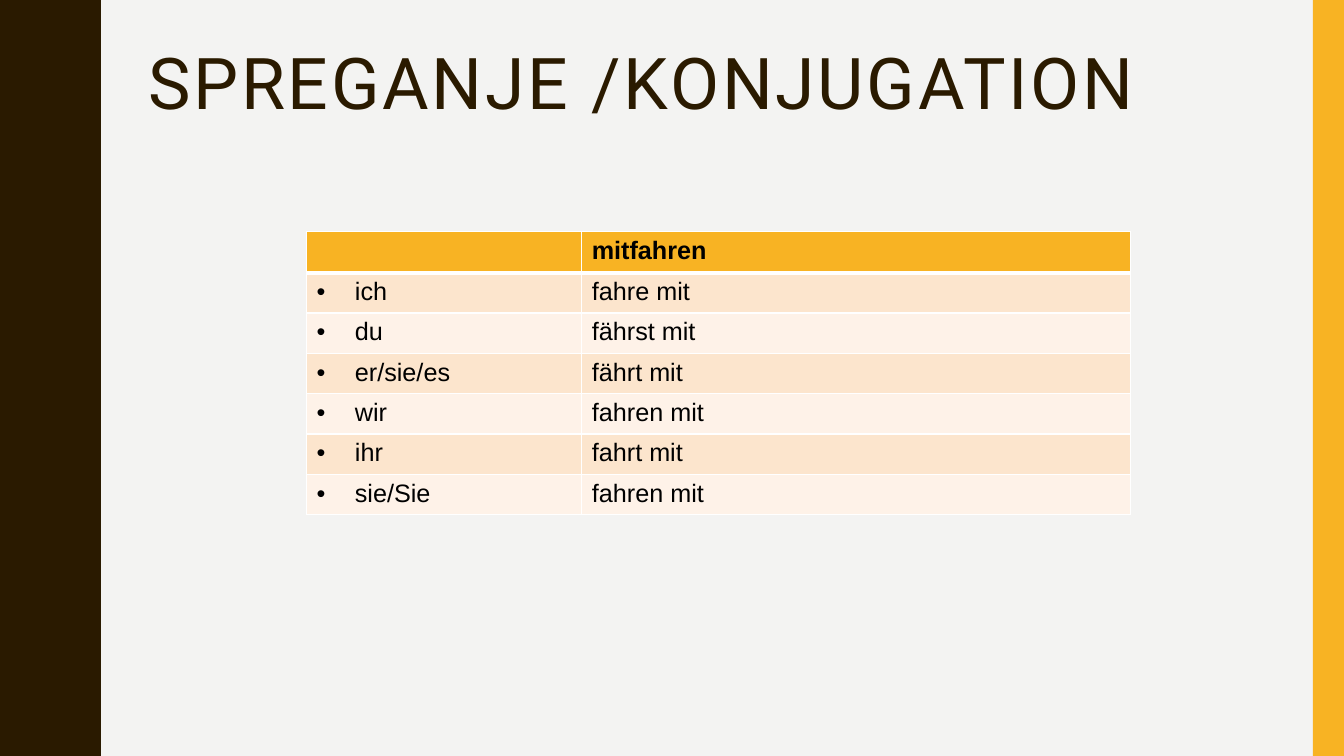
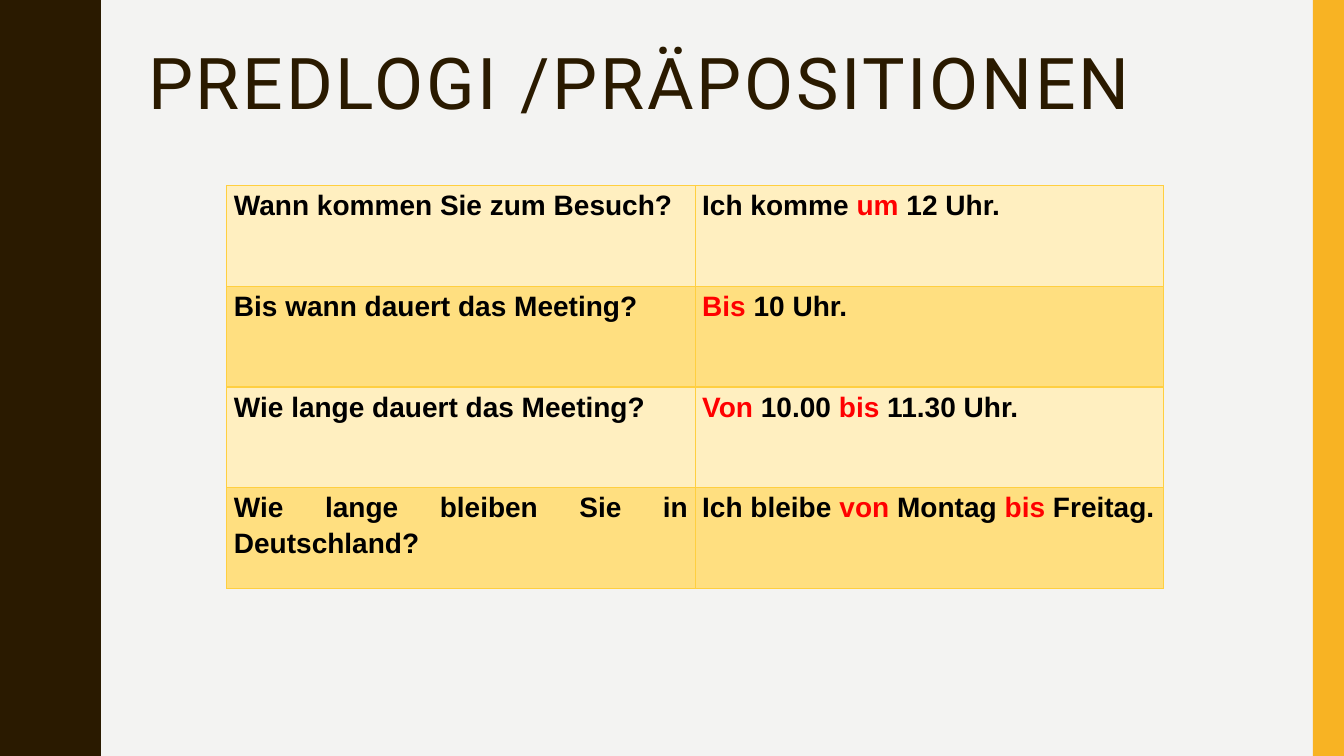
from lxml.etree import SubElement
from pptx import Presentation
from pptx.dml.color import RGBColor
from pptx.enum.shapes import MSO_SHAPE
from pptx.enum.text import MSO_ANCHOR, MSO_AUTO_SIZE, PP_ALIGN
from pptx.oxml.ns import qn
from pptx.util import Inches, Pt

PAPER = RGBColor(0xF3, 0xF3, 0xF2)
BROWN = RGBColor(0x2A, 0x1A, 0x00)
AMBER = RGBColor(0xF8, 0xB3, 0x23)
BLACK = RGBColor(0x00, 0x00, 0x00)
WHITE = RGBColor(0xFF, 0xFF, 0xFF)
RED = RGBColor(0xFF, 0x00, 0x00)
PEACH = RGBColor(0xFC, 0xE5, 0xCD)
PALE_PEACH = RGBColor(0xFE, 0xF2, 0xE8)
GOLD_LINE = RGBColor(0xFF, 0xCF, 0x40)
CREAM = RGBColor(0xFF, 0xEF, 0xC0)
YELLOW = RGBColor(0xFF, 0xDF, 0x80)

SLIDE_WIDTH, SLIDE_HEIGHT = 13.33, 7.5
STRIPE_WIDTH = 0.31
WAVE_PERIOD, WAVE_COUNT = 1.5, 5
WAVE_TROUGH, WAVE_CREST = 0.78, 0.97
# Outline from a trough to the next crest
RISING_EDGE = [
    (0.78, 0), (0.78, 0.07), (0.79, 0.14), (0.8, 0.2), (0.81, 0.25),
    (0.83, 0.29), (0.85, 0.33), (0.87, 0.38), (0.89, 0.42), (0.91, 0.46),
    (0.93, 0.5), (0.95, 0.55), (0.96, 0.61), (0.97, 0.68), (WAVE_CREST, 0.75),
]

CONJUGATION = [
    ("ich", "fahre mit"),
    ("du", "fährst mit"),
    ("er/sie/es", "fährt mit"),
    ("wir", "fahren mit"),
    ("ihr", "fahrt mit"),
    ("sie/Sie", "fahren mit"),
]
# Asterisks enclose the prepositions
QUESTIONS = [
    ("Wann kommen Sie zum Besuch?", "Ich komme *um* 12 Uhr."),
    ("Bis wann dauert das Meeting?", "*Bis* 10 Uhr."),
    ("Wie lange dauert das Meeting?", "*Von* 10.00 *bis* 11.30 Uhr."),
    ("Wie lange bleiben Sie in Deutschland?",
     "Ich bleibe *von* Montag *bis* Freitag."),
]


def write(frame, text, *, size, font="Arial", colour=BLACK, bold=False,
          align=PP_ALIGN.LEFT, line_spacing=None, tracking=0, bullet=False):
    """Fill the first paragraph, with words between asterisks in red."""
    paragraph = frame.paragraphs[0]
    if bullet:
        properties = paragraph._p.get_or_add_pPr()
        properties.set("marL", str(Inches(0.38)))
        properties.set("indent", str(-Inches(0.38)))
        SubElement(properties, qn("a:buFont"), typeface="Arial")
        SubElement(properties, qn("a:buChar"), char="•")
    paragraph.alignment = align
    if line_spacing:
        paragraph.line_spacing = line_spacing
    for index, piece in enumerate(text.split("*")):
        if not piece:
            continue
        run = paragraph.add_run()
        run.text = piece
        run.font.name = font
        run.font.size = Pt(size)
        run.font.bold = bold
        run.font.color.rgb = RED if index % 2 else colour
        if tracking:
            run.font._element.set("spc", str(tracking * 100))


def paint(shape, colour):
    shape.shadow.inherit = False
    shape.fill.solid()
    shape.fill.fore_color.rgb = colour
    shape.line.fill.background()


def wave_points():
    falling_edge = [(x, WAVE_PERIOD - y) for x, y in reversed(RISING_EDGE[1:-1])]
    wave = RISING_EDGE + falling_edge
    points = [(x, y + number * WAVE_PERIOD)
              for number in range(WAVE_COUNT) for x, y in wave]
    return points + [(WAVE_TROUGH, SLIDE_HEIGHT), (0, SLIDE_HEIGHT)]


def move_edges_to_layout(slide):
    """Draw the wavy band and the stripe, then hand them to the slide's layout."""
    outline = slide.shapes.build_freeform(0, 0, scale=Inches(1))
    outline.add_line_segments(wave_points(), close=True)
    band = outline.convert_to_shape()
    stripe = slide.shapes.add_shape(
        MSO_SHAPE.RECTANGLE, Inches(SLIDE_WIDTH - STRIPE_WIDTH), 0,
        Inches(STRIPE_WIDTH), Inches(SLIDE_HEIGHT))
    for shape, colour in ((stripe, AMBER), (band, BROWN)):
        paint(shape, colour)
        slide.slide_layout.shapes.element.insert(2, shape._element)


def set_title(slide, text):
    title = slide.shapes.title
    title.left, title.top = Inches(1.37), Inches(0.42)
    title.width, title.height = Inches(11.13), Inches(1.63)
    frame = title.text_frame
    frame.word_wrap = True
    frame.auto_size = MSO_AUTO_SIZE.NONE
    frame.vertical_anchor = MSO_ANCHOR.TOP
    write(frame, text, size=51, font="Roboto", colour=BROWN,
          line_spacing=0.9, tracking=2)


def add_grid(slide, left, top, column_widths, row_height, row_count):
    table = slide.shapes.add_table(
        row_count, len(column_widths), Inches(left), Inches(top),
        Inches(sum(column_widths)), Inches(row_height * row_count)).table
    table.first_row = table.horz_banding = False
    for column, width in zip(table.columns, column_widths):
        column.width = Inches(width)
    for row in table.rows:
        row.height = Inches(row_height)
    return table


def style_cell(cell, fill, border, bottom=1):
    """Border and fill a cell; bottom is the lower border's width in points."""
    properties = cell._tc.get_or_add_tcPr()
    for side, width in (("L", 1), ("R", 1), ("T", 1), ("B", bottom)):
        line = SubElement(properties, qn(f"a:ln{side}"), w=str(Pt(width)))
        solid = SubElement(line, qn("a:solidFill"))
        SubElement(solid, qn("a:srgbClr"), val=str(border))
    cell.fill.solid()
    cell.fill.fore_color.rgb = fill


def add_conjugation_table(slide):
    rows = [("", "mitfahren")] + CONJUGATION
    table = add_grid(slide, 3.04, 2.3, [2.73, 5.44], 0.4, len(rows))
    for row, texts in enumerate(rows):
        header = row == 0
        fill = AMBER if header else PEACH if row % 2 else PALE_PEACH
        for column, text in enumerate(texts):
            cell = table.cell(row, column)
            style_cell(cell, fill, WHITE, bottom=3 if header else 1)
            if text:
                write(cell.text_frame, text, size=18, bold=header,
                      bullet=column == 0)


def add_question_table(slide):
    table = add_grid(slide, 2.25, 1.84, [9.29 / 2] * 2, 1, len(QUESTIONS))
    for row, texts in enumerate(QUESTIONS):
        for column, text in enumerate(texts):
            cell = table.cell(row, column)
            cell.margin_left = cell.margin_right = Inches(0.07)
            cell.margin_top = cell.margin_bottom = 0
            style_cell(cell, YELLOW if row % 2 else CREAM, GOLD_LINE)
            write(cell.text_frame, text, size=20, bold=True,
                  align=PP_ALIGN.JUSTIFY, line_spacing=1.15)


def main():
    deck = Presentation()
    deck.slide_width, deck.slide_height = Inches(SLIDE_WIDTH), Inches(SLIDE_HEIGHT)
    background = deck.slide_master.background.fill
    background.solid()
    background.fore_color.rgb = PAPER
    title_only = deck.slide_layouts[5]

    conjugation = deck.slides.add_slide(title_only)
    move_edges_to_layout(conjugation)
    set_title(conjugation, "SPREGANJE /KONJUGATION")
    add_conjugation_table(conjugation)

    prepositions = deck.slides.add_slide(title_only)
    set_title(prepositions, "PREDLOGI /PRÄPOSITIONEN")
    add_question_table(prepositions)

    deck.save("out.pptx")


if __name__ == "__main__":
    main()
